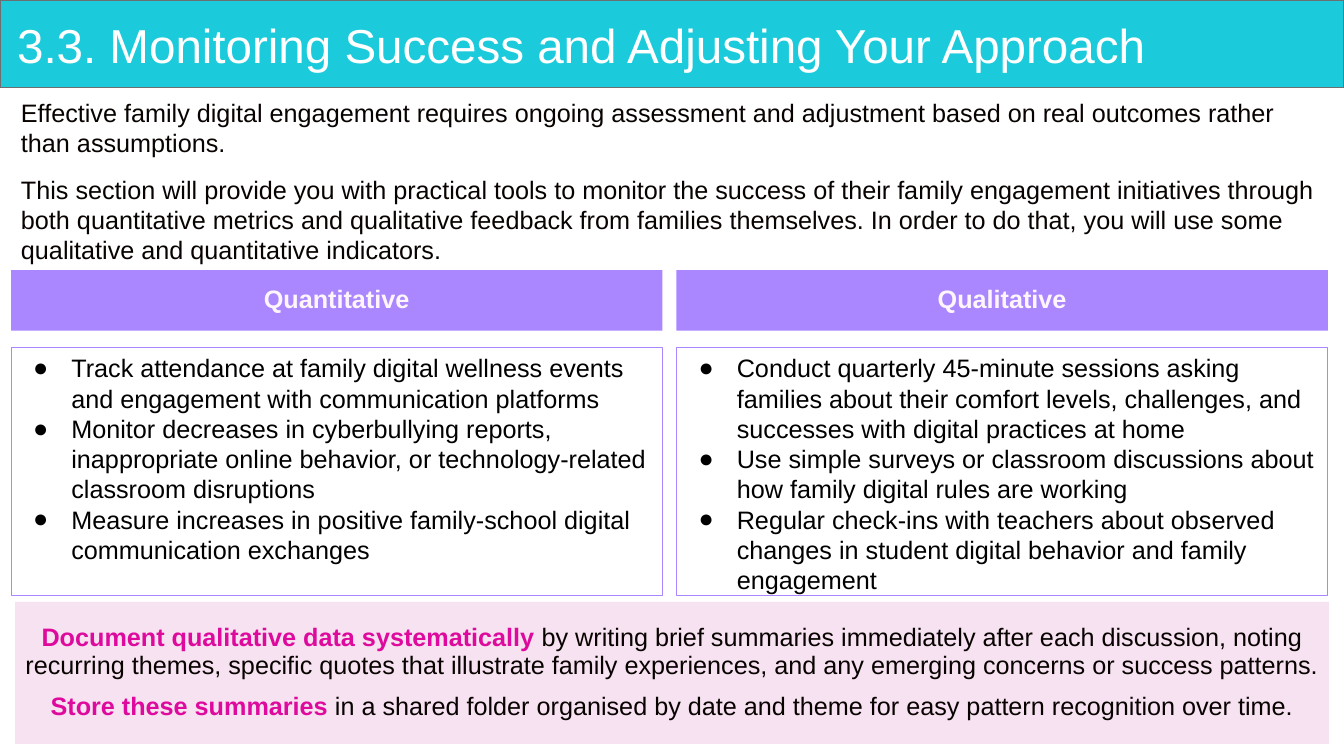
from dataclasses import dataclass

from lxml.etree import SubElement
from pptx import Presentation
from pptx.dml.color import RGBColor
from pptx.enum.shapes import MSO_SHAPE
from pptx.enum.text import MSO_ANCHOR, MSO_AUTO_SIZE, PP_ALIGN
from pptx.oxml.ns import qn
from pptx.util import Inches, Pt


@dataclass(frozen=True)
class Theme:
    font: str = "Arial"
    title_size: int = 34
    body_size: int = 18
    white: str = "FFFFFF"
    black: str = "000000"
    ink: str = "080301"
    band: str = "1BCBDC"
    band_line: str = "6C6E70"
    violet: str = "AA87FF"
    header_text: str = "FEF6FC"
    blush: str = "F6E2F0"
    magenta: str = "DE0A9D"


@dataclass(frozen=True)
class Box:
    left: float
    top: float
    width: float
    height: float

    def emu(self):
        return [Inches(side) for side in (self.left, self.top, self.width, self.height)]

    def columns(self, count, gap):
        width = (self.width - gap * (count - 1)) / count
        return [Box(self.left + index * (width + gap), self.top, width, self.height)
                for index in range(count)]

    def rows(self, *spans):
        return [Box(self.left, self.top + offset, self.width, height)
                for offset, height in spans]


THEME = Theme()
PAGE = Box(0, 0, 13.33, 7.5)
MARGIN = 0.11
CONTENT_WIDTH = 13.06

INTRO = [
    "Effective family digital engagement requires ongoing assessment and adjustment based on real outcomes rather than assumptions.",
    "This section will provide you with practical tools to monitor the success of their family engagement initiatives through both quantitative metrics and qualitative feedback from families themselves. In order to do that, you will use some qualitative and quantitative indicators.",
]
INDICATORS = {
    "Quantitative": [
        "Track attendance at family digital wellness events and engagement with communication platforms",
        "Monitor decreases in cyberbullying reports, inappropriate online behavior, or technology-related classroom disruptions",
        "Measure increases in positive family-school digital communication exchanges",
    ],
    "Qualitative": [
        "Conduct quarterly 45-minute sessions asking families about their comfort levels, challenges, and successes with digital practices at home",
        "Use simple surveys or classroom discussions about how family digital rules are working",
        "Regular check-ins with teachers about observed changes in student digital behavior and family engagement",
    ],
}
ADVICE = [
    [("Document qualitative data systematically", True),
     (" by writing brief summaries immediately after each discussion, noting recurring themes, specific quotes that illustrate family experiences, and any emerging concerns or success patterns.", False)],
    [("Store these summaries", True),
     (" in a shared folder organised by date and theme for easy pattern recognition over time.", False)],
]


def rgb(color):
    return RGBColor.from_string(color)


def add_bullet(para):
    properties = para._p.get_or_add_pPr()
    properties.set("marL", str(Inches(0.5)))
    properties.set("indent", str(Inches(-0.38)))
    color = SubElement(properties, qn("a:buClr"))
    SubElement(color, qn("a:srgbClr"), val=THEME.black)
    SubElement(properties, qn("a:buFont"), typeface=THEME.font)
    SubElement(properties, qn("a:buChar"), char="●")


def write(shape, paragraphs, size=THEME.body_size, color=THEME.ink, accent=THEME.magenta,
          bold=False, align=PP_ALIGN.LEFT, anchor=MSO_ANCHOR.MIDDLE, line=1.0,
          gap=0, bullets=False, insets=(0.1, 0.05)):
    frame = shape.text_frame
    frame.word_wrap = True
    frame.auto_size = MSO_AUTO_SIZE.NONE
    frame.vertical_anchor = anchor
    frame.margin_left = frame.margin_right = Inches(insets[0])
    frame.margin_top = frame.margin_bottom = Inches(insets[1])
    for index, content in enumerate(paragraphs):
        para = frame.add_paragraph() if index else frame.paragraphs[0]
        if bullets:
            add_bullet(para)
        para.alignment = align
        para.line_spacing = line
        para.space_before = Pt(gap if index else 0)
        spans = [(content, False)] if isinstance(content, str) else content
        for text, stressed in spans:
            span = para.add_run()
            span.text = text
            span.font.name = THEME.font
            span.font.size = Pt(size)
            span.font.bold = bold or stressed
            span.font.color.rgb = rgb(accent if stressed else color)


def add_panel(page, box, fill=None, line=None, weight=0.75):
    panel = page.shapes.add_shape(MSO_SHAPE.RECTANGLE, *box.emu())
    panel.shadow.inherit = False
    if fill:
        panel.fill.solid()
        panel.fill.fore_color.rgb = rgb(fill)
    else:
        panel.fill.background()
    if line:
        panel.line.color.rgb = rgb(line)
        panel.line.width = Pt(weight)
    else:
        panel.line.fill.background()
    return panel


def add_title(page, box, text):
    band = add_panel(page, box, THEME.band, THEME.band_line, 1)
    title = page.shapes.title
    title._element.addprevious(band._element)
    inner = Box(box.left + MARGIN, box.top + 0.09, CONTENT_WIDTH, box.height - 0.09)
    title.left, title.top, title.width, title.height = inner.emu()
    write(title, [text], size=THEME.title_size, color=THEME.white, line=0.9,
          insets=(0.06, 0.06))


def add_intro(page, box):
    write(page.shapes.add_textbox(*box.emu()), INTRO, gap=12)


def add_indicators(page, box):
    for column, (heading, points) in zip(box.columns(2, 0.14), INDICATORS.items()):
        head, body = column.rows((0, 0.6), (0.77, box.height - 0.77))
        write(add_panel(page, body, line=THEME.violet), points, color=THEME.black,
              anchor=MSO_ANCHOR.TOP, bullets=True)
        write(add_panel(page, head, fill=THEME.violet), [heading],
              color=THEME.header_text, bold=True, align=PP_ALIGN.CENTER, line=0.9)


def add_advice(page, box):
    write(add_panel(page, box, fill=THEME.blush), ADVICE, align=PP_ALIGN.CENTER,
          line=0.9, gap=10)


def main():
    deck = Presentation()
    deck.slide_width, deck.slide_height = Inches(PAGE.width), Inches(PAGE.height)
    page = deck.slides.add_slide(deck.slide_layouts[5])
    add_title(page, Box(0, 0, PAGE.width, 0.87),
              "3.3. Monitoring Success and Adjusting Your Approach")
    add_intro(page, Box(MARGIN, 0.99, CONTENT_WIDTH, 1.61))
    add_indicators(page, Box(MARGIN, 2.68, CONTENT_WIDTH, 3.23))
    add_advice(page, Box(0.15, 5.97, 13.03, 1.41))
    deck.save("out.pptx")


if __name__ == "__main__":
    main()
